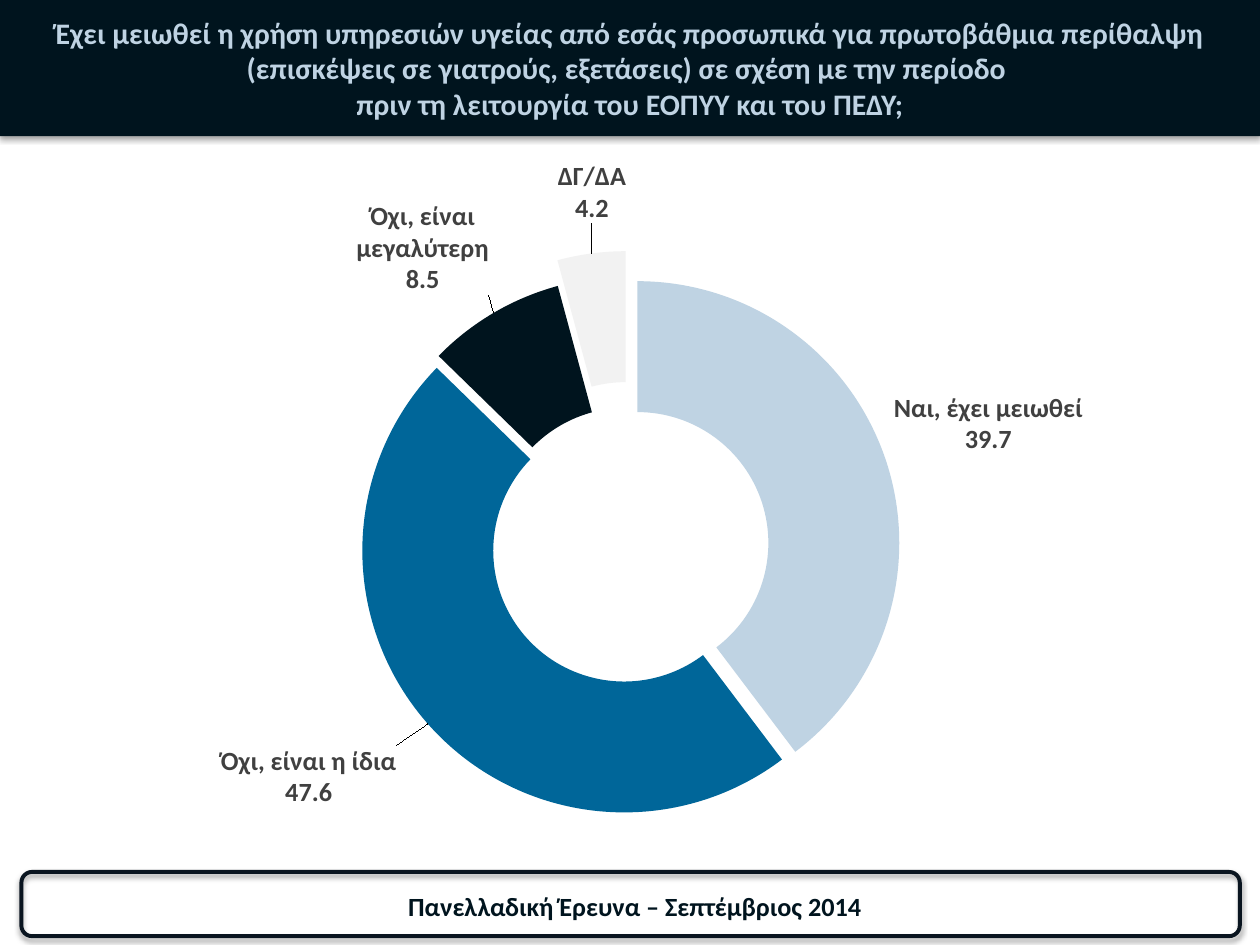
from lxml.etree import SubElement
from pptx import Presentation
from pptx.chart.data import CategoryChartData
from pptx.dml.color import RGBColor
from pptx.enum.chart import XL_CHART_TYPE as ChartType
from pptx.enum.shapes import MSO_SHAPE as Shape
from pptx.enum.text import MSO_ANCHOR as Anchor, PP_ALIGN as Align
from pptx.oxml import parse_xml
from pptx.oxml.ns import nsdecls, qn
from pptx.util import Pt

NAVY = RGBColor(0x00, 0x14, 0x1E)
OUTLINE = RGBColor(0x0A, 0x15, 0x20)
PALE_BLUE = RGBColor(0xBF, 0xD3, 0xE3)
BLUE = RGBColor(0x00, 0x66, 0x99)
LIGHT_GREY = RGBColor(0xF2, 0xF2, 0xF2)
DARK_GREY = RGBColor(0x40, 0x40, 0x40)
BLACK = RGBColor(0, 0, 0)
FONT = "Calibri"
NUMBER_FORMAT = "#,##0.0"

TITLE = (
    "Έχει μειωθεί η χρήση υπηρεσιών υγείας από εσάς προσωπικά για πρωτοβάθμια περίθαλψη "
    "(επισκέψεις σε γιατρούς, εξετάσεις) σε σχέση με την περίοδο \v"
    "πριν τη λειτουργία του ΕΟΠΥΥ και του ΠΕΔΥ;"
)
FOOTER = "Πανελλαδική Έρευνα – Σεπτέμβριος 2014"
TITLE_BOX = (0, 0, 720, 77.76)
FOOTER_FRAME = (12.24, 498.24, 696.24, 36.72)
FOOTER_BOX = (144, 505.44, 437.76, 25.2)
CHART_BOX = (30.24, 84.24, 653.76, 419.76)
PLOT_LAYOUT = {"x": 0.247, "y": 0.141, "w": 0.515, "h": 0.802}
SERIES_EXPLOSION = 25

ANSWERS = [
    ("Ναι, έχει μειωθεί", 39.7, PALE_BLUE, 6, (0.144, -0.077)),
    ("Όχι, είναι η ίδια", 47.6, BLUE, 6, (-0.147, 0.131)),
    ("Όχι, είναι μεγαλύτερη", 8.5, NAVY, 6, (-0.091, -0.165)),
    ("ΔΓ/ΔΑ", 4.2, LIGHT_GREY, SERIES_EXPLOSION, (-0.007, -0.172)),
]


def points(box):
    return [Pt(length) for length in box]


def style_font(font, size, color, bold=True):
    font.name = FONT
    font.size = Pt(size)
    font.bold = bold
    font.color.rgb = color


def add_panel(slide, kind, box, opacity, distance, fill=None, line=None):
    shape = slide.shapes.add_shape(kind, *points(box))
    if fill is None:
        shape.fill.background()
    else:
        shape.fill.solid()
        shape.fill.fore_color.rgb = fill
    if line is None:
        shape.line.fill.background()
    else:
        shape.line.color.rgb = line
        shape.line.width = Pt(2.25)
    shape.shadow.inherit = False
    effects = shape._element.spPr.find(qn("a:effectLst"))
    effects.append(parse_xml(
        f'<a:outerShdw {nsdecls("a")} blurRad="{Pt(3.1)}" dist="{Pt(distance)}" '
        f'dir="5400000" rotWithShape="0"><a:srgbClr val="000000">'
        f'<a:alpha val="{opacity * 1000}"/></a:srgbClr></a:outerShdw>'
    ))


def write_text(shape, text, size, color, anchor):
    frame = shape.text_frame
    frame.word_wrap = True
    frame.vertical_anchor = anchor
    frame.text = text
    paragraph = frame.paragraphs[0]
    paragraph.alignment = Align.CENTER
    for run in paragraph.runs:
        style_font(run.font, size, color)


def add_title(slide):
    title = slide.shapes.title
    title.left, title.top, title.width, title.height = points(TITLE_BOX)
    write_text(title, TITLE, 17, PALE_BLUE, Anchor.MIDDLE)
    slide.shapes._spTree.append(title._element)


def manual_layout(values, inner=False):
    target = '<c:layoutTarget val="inner"/>' if inner else ""
    modes = '<c:xMode val="edge"/><c:yMode val="edge"/>' if inner else ""
    numbers = "".join(f'<c:{key} val="{value}"/>' for key, value in values.items())
    return parse_xml(
        f'<c:layout {nsdecls("c")}><c:manualLayout>{target}{modes}{numbers}'
        f'</c:manualLayout></c:layout>'
    )


def explosion_element(value):
    return parse_xml(f'<c:explosion {nsdecls("c")} val="{value}"/>')


def show_category_and_value(labels):
    labels.find(qn("c:showVal")).set("val", "1")
    labels.find(qn("c:showCatName")).set("val", "1")
    labels.find(qn("c:showPercent")).set("val", "0")
    separator = SubElement(labels, qn("c:separator"))
    separator.text = "\n"
    last_flag = labels.find(qn("c:showBubbleSize"))
    if last_flag is None:
        last_flag = labels.find(qn("c:showPercent"))
    last_flag.addnext(separator)


def format_slice(series, index, color, explosion, offset):
    point = series.points[index]
    point.format.fill.solid()
    point.format.fill.fore_color.rgb = color
    point.format.line.fill.background()
    properties = series._element.xpath(f"c:dPt[c:idx/@val='{index}']/c:spPr")[0]
    properties.addprevious(explosion_element(explosion))
    style_font(point.data_label.font, 15, DARK_GREY)
    label = series._element.xpath(f"c:dLbls/c:dLbl[c:idx/@val='{index}']")[0]
    label.find(qn("c:idx")).addnext(manual_layout(dict(zip("xy", offset))))
    show_category_and_value(label)


def add_doughnut(slide):
    data = CategoryChartData(number_format=NUMBER_FORMAT)
    data.categories = [answer[0] for answer in ANSWERS]
    data.add_series("Series 1", [answer[1] for answer in ANSWERS])
    chart = slide.shapes.add_chart(
        ChartType.DOUGHNUT, *points(CHART_BOX), data
    ).chart
    chart.has_legend = False
    chart.has_title = False
    style_font(chart.font, 18, BLACK, bold=False)

    plot = chart.plots[0]
    plot.vary_by_categories = True
    plot._element.find(qn("c:holeSize")).set("val", "37")
    plot_area = plot._element.getparent()
    for layout in plot_area.findall(qn("c:layout")):
        plot_area.remove(layout)
    plot_area.insert(0, manual_layout(PLOT_LAYOUT, inner=True))

    series = plot.series[0]
    for index, (_, _, color, explosion, offset) in enumerate(ANSWERS):
        format_slice(series, index, color, explosion, offset)
    first_slice = series._element.find(qn("c:dPt"))
    first_slice.addprevious(explosion_element(SERIES_EXPLOSION))
    labels = series.data_labels
    labels.number_format = NUMBER_FORMAT
    labels.number_format_is_linked = False
    style_font(labels.font, 15, DARK_GREY)
    show_category_and_value(series._element.find(qn("c:dLbls")))


def main():
    presentation = Presentation()
    presentation.slide_width = Pt(720)
    presentation.slide_height = Pt(540)
    slide = presentation.slides.add_slide(presentation.slide_layouts[5])
    add_panel(slide, Shape.RECTANGLE, TITLE_BOX, 35, 1.8, fill=NAVY)
    add_panel(slide, Shape.ROUNDED_RECTANGLE, FOOTER_FRAME, 38, 1.6, line=OUTLINE)
    footer = slide.shapes.add_textbox(*points(FOOTER_BOX))
    write_text(footer, FOOTER, 15, NAVY, Anchor.TOP)
    add_title(slide)
    add_doughnut(slide)
    presentation.save("out.pptx")


if __name__ == "__main__":
    main()
